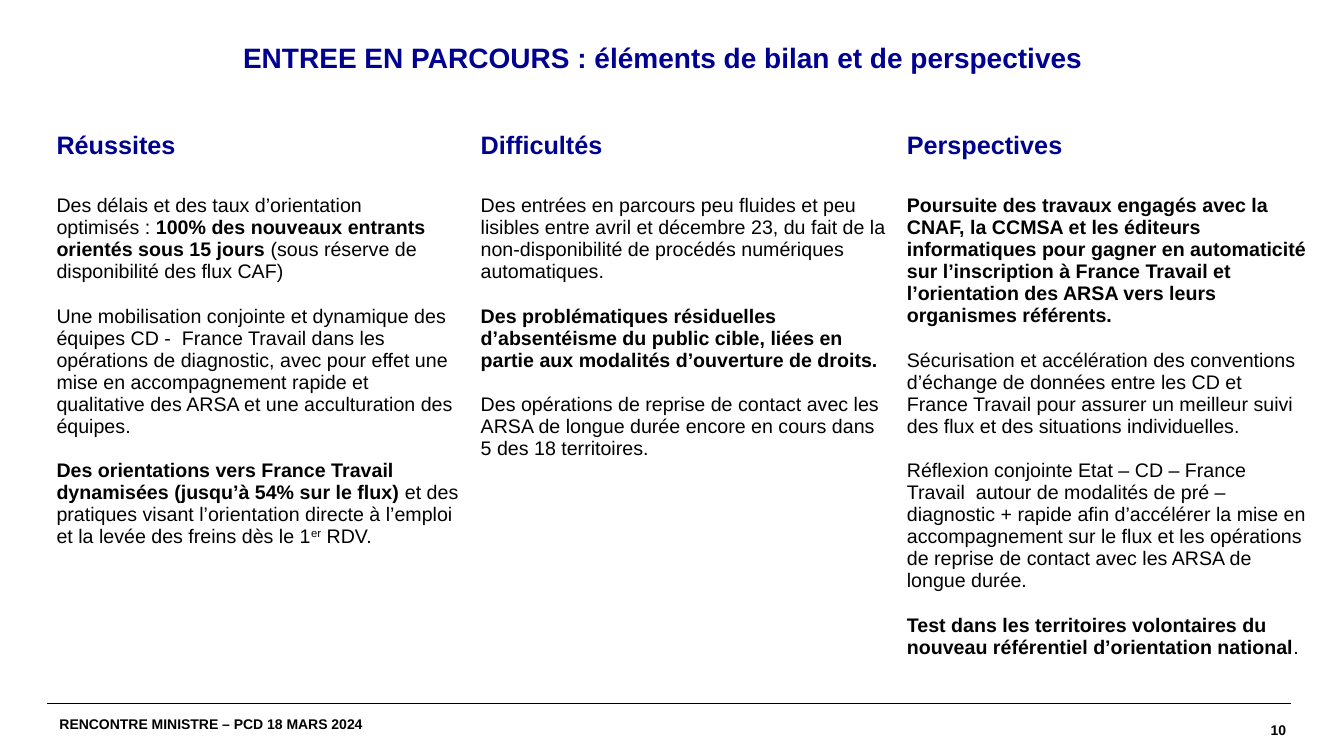
import pptx
import pptx.util
import pptx.dml.color
import pptx.enum.shapes
import pptx.enum.text
import pptx.oxml.ns
from dataclasses import dataclass
from lxml import etree
from pptx.util import Cm, Pt

# Content: each paragraph is a list of (text, style) spans
TITLE = "ENTREE EN PARCOURS : éléments de bilan et de perspectives"
FOOTER = "RENCONTRE MINISTRE – PCD 18 MARS 2024"
PAGE_NUMBER = "10"
COLUMNS = [
    ("Réussites", 10.69, [
        [("Des délais et des taux d’orientation optimisés : ", ""),
         ("100% des nouveaux entrants orientés sous 15 jours ", "bold"),
         ("(sous réserve de disponibilité des flux CAF)", "")],
        [("Une mobilisation conjointe et dynamique des équipes CD -  France Travail dans les "
          "opérations de diagnostic, avec pour effet une mise en accompagnement rapide et "
          "qualitative des ARSA et une acculturation des équipes.", "")],
        [("Des orientations vers France Travail dynamisées (jusqu’à 54% sur le flux) ", "bold"),
         ("et des pratiques visant l’orientation directe à l’emploi et la levée des freins "
          "dès le 1", ""),
         ("er", "super"),
         (" RDV.", "")],
    ]),
    ("Difficultés", 10.74, [
        [("Des entrées en parcours peu fluides et peu lisibles entre avril et décembre 23, "
          "du fait de la non-disponibilité de procédés numériques automatiques.", "")],
        [("Des problématiques résiduelles d’absentéisme du public cible, liées en partie "
          "aux modalités d’ouverture de droits.", "bold")],
        [("Des opérations de reprise de contact avec les ARSA de longue durée encore en "
          "cours dans 5 des 18 territoires.", "")],
    ]),
    ("Perspectives", 10.62, [
        [("Poursuite des travaux engagés avec la CNAF, la CCMSA et les éditeurs informatiques "
          "pour gagner en automaticité sur l’inscription à France Travail et l’orientation "
          "des ARSA vers leurs organismes référents.", "bold")],
        [("Sécurisation et accélération des conventions d’échange de données entre les CD et "
          "France Travail pour assurer un meilleur suivi des flux et des situations "
          "individuelles.", "")],
        [("Réflexion conjointe Etat – CD – France Travail  autour de modalités de pré – "
          "diagnostic + rapide afin d’accélérer la mise en accompagnement sur le flux et les "
          "opérations de reprise de contact avec les ARSA de longue durée.", "")],
        [("Test dans les territoires volontaires du nouveau référentiel d’orientation "
          "national", "bold"),
         (".", "")],
    ]),
]


@dataclass(frozen=True)
class Theme:
    font: str = "Arial"
    blue: pptx.dml.color.RGBColor = pptx.dml.color.RGBColor(0x00, 0x00, 0x91)
    black: pptx.dml.color.RGBColor = pptx.dml.color.RGBColor(0, 0, 0)
    title: int = 20
    heading: int = 18
    body: int = 14
    footer: int = 10


THEME = Theme()
ROW_HEIGHTS = (1.55, 13.36)
CELL_TOP = 0.69
PARAGRAPH_GAP = 16
RULE_TOP = 17.73
RULE_WIDTH = 31.22
RULE_STARTS = (1.19, 1.32)


def add_span(para, text, size, color, bold=True, superscript=False):
    span = para.add_run()
    span.text = text
    span.font.name = THEME.font
    span.font.size = Pt(size)
    span.font.bold = bold
    span.font.color.rgb = color
    if superscript:
        span._r.get_or_add_rPr().set("baseline", "30000")


def add_footer_text(page, text, place, insets, alignment):
    box = page.shapes.add_textbox(*map(Cm, place))
    frame = box.text_frame
    frame.word_wrap = True
    frame.vertical_anchor = pptx.enum.text.MSO_ANCHOR.MIDDLE
    frame.margin_left = frame.margin_right = Cm(insets[0])
    frame.margin_top = frame.margin_bottom = Cm(insets[1])
    para = frame.paragraphs[0]
    para.alignment = alignment
    add_span(para, text, THEME.footer, THEME.black)


def add_rule(page, left):
    rule = page.shapes.add_connector(
        pptx.enum.shapes.MSO_CONNECTOR.STRAIGHT,
        Cm(left), Cm(RULE_TOP), Cm(left + RULE_WIDTH), Cm(RULE_TOP))
    rule.line.color.rgb = THEME.black
    rule.line.width = Pt(0.8)
    etree.SubElement(rule._element.spPr, pptx.oxml.ns.qn("a:effectLst"))


def add_title(page):
    title = page.shapes.title
    title.left, title.top, title.width, title.height = map(Cm, (5.87, 0.99, 27.38, 2.21))
    frame = title.text_frame
    frame.word_wrap = True
    frame.auto_size = pptx.enum.text.MSO_AUTO_SIZE.NONE
    frame.vertical_anchor = pptx.enum.text.MSO_ANCHOR.TOP
    para = frame.paragraphs[0]
    para.alignment = pptx.enum.text.PP_ALIGN.LEFT
    para.line_spacing = 0.9
    para.space_after = Pt(6.7)
    add_span(para, TITLE, THEME.title, THEME.blue)


def add_review_table(page):
    widths = [width for _, width, _ in COLUMNS]
    table = page.shapes.add_table(
        2, len(COLUMNS), Cm(1.17), Cm(2.64), Cm(sum(widths)), Cm(sum(ROW_HEIGHTS))).table
    table.horz_banding = False
    for row, height in zip(table.rows, ROW_HEIGHTS):
        row.height = Cm(height)
    for index, (heading, width, paragraphs) in enumerate(COLUMNS):
        table.columns[index].width = Cm(width)
        head, body = table.cell(0, index), table.cell(1, index)
        for cell in (head, body):
            cell.fill.background()
            cell.margin_top = Cm(CELL_TOP)
        add_span(head.text_frame.paragraphs[0], heading, THEME.heading, THEME.blue)
        for order, spans in enumerate(paragraphs):
            frame = body.text_frame
            para = frame.add_paragraph() if order else frame.paragraphs[0]
            if order:
                para.space_before = Pt(PARAGRAPH_GAP)
            for text, style in spans:
                add_span(para, text, THEME.body, THEME.black,
                         style == "bold", style == "super")


def main():
    deck = pptx.Presentation()
    deck.slide_width, deck.slide_height = Cm(33.87), Cm(19.05)
    page = deck.slides.add_slide(deck.slide_layouts.get_by_name("Title Only"))

    # Footer
    for left in RULE_STARTS:
        add_rule(page, left)
    add_footer_text(page, PAGE_NUMBER, (27.41, RULE_TOP, 5, 1.32), (0, 0),
                    pptx.enum.text.PP_ALIGN.RIGHT)
    add_footer_text(page, FOOTER, (1.17, RULE_TOP, 8.76, 1.02), (0.33, 0.18),
                    pptx.enum.text.PP_ALIGN.LEFT)

    # Table and title
    add_review_table(page)
    add_title(page)
    deck.save("out.pptx")


if __name__ == "__main__":
    main()
